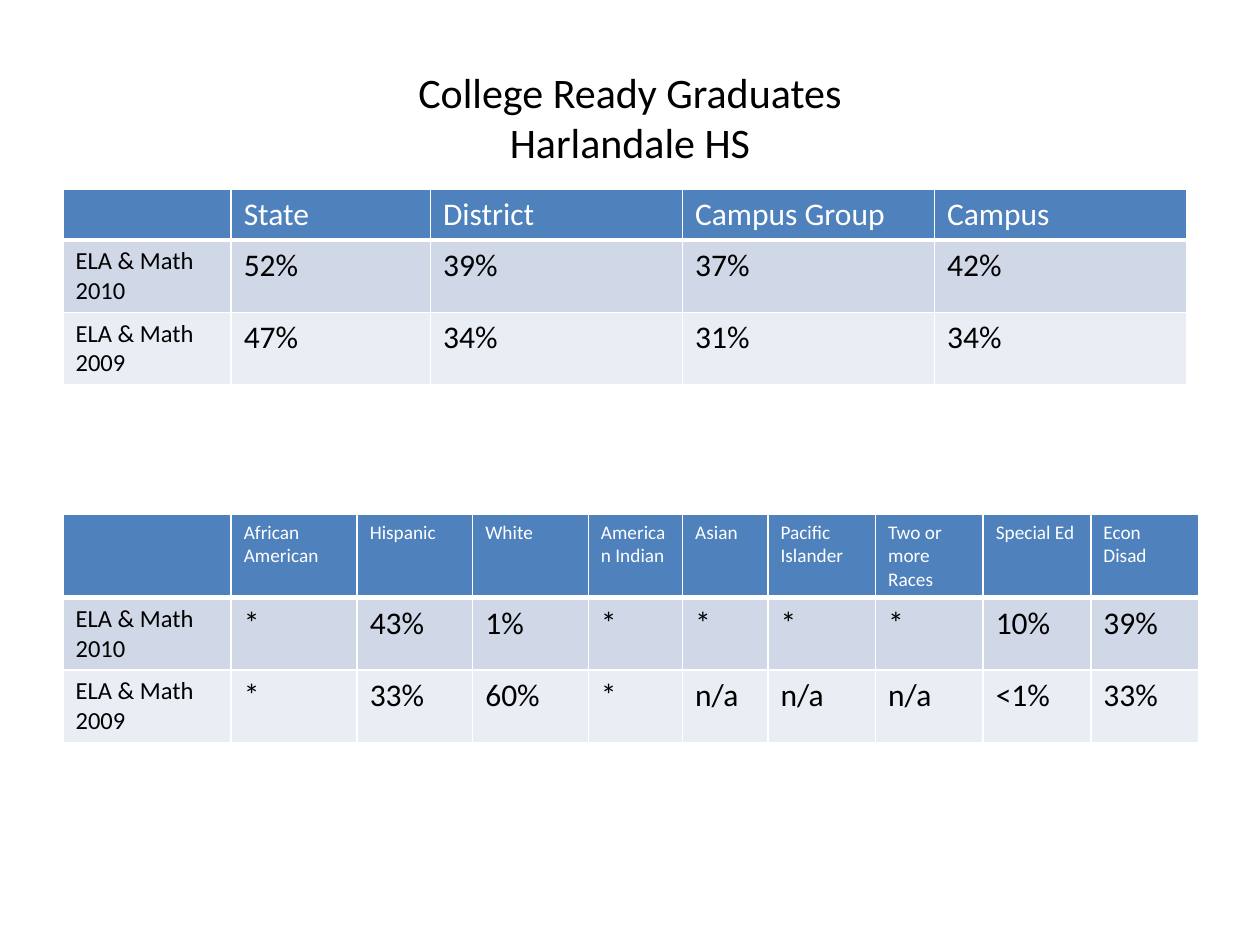
"""Build a slide with two tables of college ready graduates."""
from lxml.etree import SubElement
from pptx import Presentation
from pptx.dml.color import RGBColor
from pptx.enum.text import MSO_ANCHOR as Anchor, PP_ALIGN as Align
from pptx.oxml.ns import qn
from pptx.util import Cm, Pt

FONT = "Calibri"
BLACK = RGBColor(0x00, 0x00, 0x00)
WHITE = RGBColor(0xFF, 0xFF, 0xFF)
HEADER_BLUE = RGBColor(0x4F, 0x81, 0xBD)
BAND_COLORS = (RGBColor(0xD0, 0xD8, 0xE8), RGBColor(0xE9, 0xED, 0xF4))

LEFT = 1.27
BODY_HEIGHT = 1.46
LABEL_SIZE = 14
VALUE_SIZE = 18

SUMMARY_WIDTHS = [3.39, 4.02] + [5.08] * 3
SUMMARY_ROWS = [
    ["", "State", "District", "Campus Group", "Campus"],
    ["ELA & Math 2010", "52%", "39%", "37%", "42%"],
    ["ELA & Math 2009", "47%", "34%", "31%", "34%"],
]

GROUP_WIDTHS = [3.39, 2.54, 2.33, 2.33, 1.9, 1.72] + [2.17] * 4
GROUP_ROWS = [
    ["", "African American", "Hispanic", "White", "American Indian", "Asian",
     "Pacific Islander", "Two or more Races", "Special Ed", "Econ Disad"],
    ["ELA & Math 2010", "*", "43%", "1%", "*", "*", "*", "*", "10%", "39%"],
    ["ELA & Math 2009", "*", "33%", "60%", "*", "n/a", "n/a", "n/a", "<1%", "33%"],
]


def format_runs(paragraph, size, color):
    """Give every run of a paragraph its font, size and colour."""
    for run in paragraph.runs:
        run.font.name = FONT
        run.font.size = Pt(size)
        run.font.color.rgb = color


def add_title(slide, text):
    """Add the centred slide title."""
    box = slide.shapes.add_textbox(Cm(LEFT), Cm(0.76), Cm(22.86), Cm(3.18))
    frame = box.text_frame
    frame.word_wrap = True
    frame.vertical_anchor = Anchor.MIDDLE
    paragraph = frame.paragraphs[0]
    paragraph.text = text
    paragraph.alignment = Align.CENTER
    format_runs(paragraph, 24, BLACK)


def set_borders(cell, bottom_width):
    """Draw white borders around a cell."""
    properties = cell._tc.get_or_add_tcPr()
    for side, width in (("L", 1), ("R", 1), ("T", 1), ("B", bottom_width)):
        line = SubElement(properties, qn(f"a:ln{side}"), w=str(Pt(width)))
        fill = SubElement(line, qn("a:solidFill"))
        SubElement(fill, qn("a:srgbClr"), val=str(WHITE))


def fill_cell(cell, text, size, text_color, fill_color, bottom_width):
    """Write and colour one table cell."""
    cell.text = text
    format_runs(cell.text_frame.paragraphs[0], size, text_color)
    set_borders(cell, bottom_width)
    cell.fill.solid()
    cell.fill.fore_color.rgb = fill_color


def add_result_table(slide, top, widths, rows, header_height, header_size):
    """Add a table with a blue header row and banded body rows."""
    heights = [header_height] + [BODY_HEIGHT] * (len(rows) - 1)
    table = slide.shapes.add_table(
        len(rows), len(widths), Cm(LEFT), Cm(top), Cm(sum(widths)), Cm(sum(heights))
    ).table
    for column, width in zip(table.columns, widths):
        column.width = Cm(width)
    for row, height in zip(table.rows, heights):
        row.height = Cm(height)
    for row_index, texts in enumerate(rows):
        for column_index, text in enumerate(texts):
            cell = table.cell(row_index, column_index)
            if row_index == 0:
                fill_cell(cell, text, header_size, WHITE, HEADER_BLUE, 3)
            else:
                size = VALUE_SIZE if column_index else LABEL_SIZE
                fill_cell(cell, text, size, BLACK, BAND_COLORS[(row_index - 1) % 2], 1)


def main():
    """Build and save the presentation."""
    presentation = Presentation()
    presentation.slide_width = Cm(25.4)
    presentation.slide_height = Cm(19.05)
    slide = presentation.slides.add_slide(presentation.slide_layouts[6])
    add_title(slide, "College Ready Graduates\vHarlandale HS")
    add_result_table(slide, 3.81, SUMMARY_WIDTHS, SUMMARY_ROWS, 1.03, 18)
    add_result_table(slide, 10.37, GROUP_WIDTHS, GROUP_ROWS, 1.68, 11)
    presentation.save("out.pptx")


if __name__ == "__main__":
    main()
